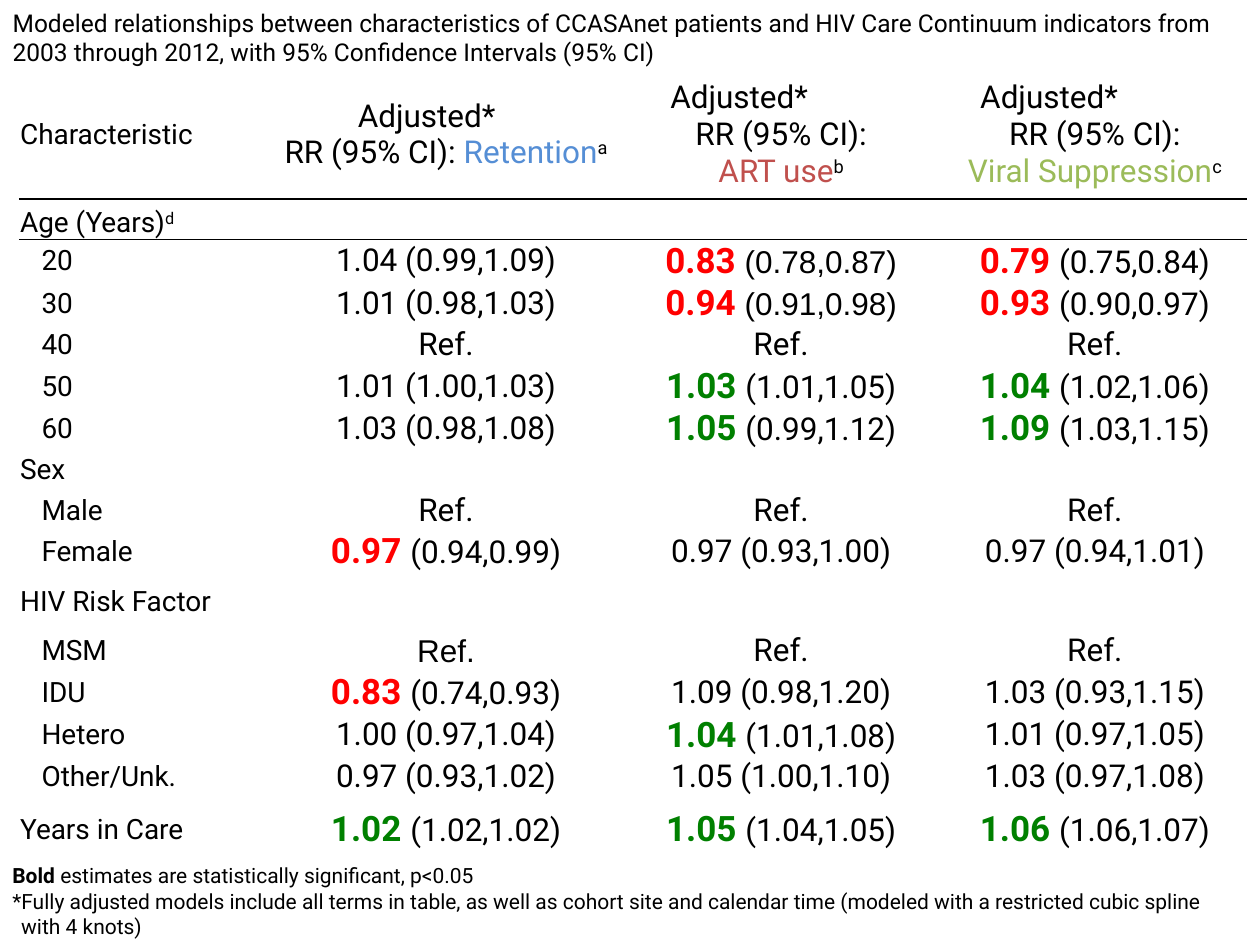
from dataclasses import dataclass

from lxml import etree
from pptx import Presentation
from pptx.dml.color import RGBColor
from pptx.enum.text import MSO_ANCHOR, MSO_AUTO_SIZE, PP_ALIGN
from pptx.oxml.ns import qn
from pptx.util import Emu, Pt

LEFT, CENTER = PP_ALIGN.LEFT, PP_ALIGN.CENTER
TOP, MIDDLE, BOTTOM = MSO_ANCHOR.TOP, MSO_ANCHOR.MIDDLE, MSO_ANCHOR.BOTTOM
NO_AUTOFIT = MSO_AUTO_SIZE.NONE
PX = 9144  # 100 px to the inch
TITLE_ONLY = 5
PLAIN_TABLE_STYLE = "{2D5ABB26-0587-4C30-8999-92F81FD0307C}"


@dataclass(frozen=True)
class Theme:
    font: str = "Roboto"
    alternate_font: str = "Arial"
    text: str = "000000"
    lower: str = "FF0000"
    higher: str = "008000"
    retention: str = "558ED5"
    art_use: str = "C0504D"
    suppression: str = "9BBB59"
    title_size: int = 14
    label_size: int = 16
    value_size: int = 18
    bold_size: int = 20
    note_size: int = 12


@dataclass(frozen=True)
class Span:
    text: str
    color: str = ""
    size: int = 0
    bold: bool = False
    font: str = ""
    superscript: bool = False


@dataclass(frozen=True)
class Line:
    spans: tuple
    align: PP_ALIGN = LEFT
    indent: int = 0


THEME = Theme()
INDENT = 17
COLUMN_WIDTHS = (201, 276, 256, 242)
HEADER_HEIGHT, ROW_HEIGHT = 103, 32
TALL_ROWS = {"HIV Risk Factor": 46, "Years in Care": 53}

TITLE = ("Modeled relationships between characteristics of CCASAnet patients and "
         "HIV Care Continuum indicators from 2003 through 2012, "
         "with 95% Confidence Intervals (95% CI)")

# "*" marks a significant estimate, "~" text in the alternate font.
GROUPS = (
    ("Age (Years)", (), (
        ("20", "1.04 (0.99,1.09)", "*0.83 ~(0.78,0.87)", "*0.79 (0.75,0.84)"),
        ("30", "1.01 (0.98,1.03)", "*0.94 ~(0.91,0.98)", "*0.93 (0.90,0.97)"),
        ("40", "Ref.", "Ref.", "Ref."),
        ("50", "1.01 (1.00,1.03)", "*1.03 (1.01,1.05)", "*1.04 (1.02,1.06)"),
        ("60", "1.03 (0.98,1.08)", "*1.05 (0.99,1.12)", "*1.09 (1.03,1.15)"))),
    ("Sex", (), (
        ("Male", "Ref.", "Ref.", "Ref."),
        ("Female", "*0.97 (0.94,0.99)", "0.97 (0.93,1.00)", "0.97 (0.94,1.01)"))),
    ("HIV Risk Factor", (), (
        ("MSM", "~Ref.", "Ref.", "Ref."),
        ("IDU", "*0.83 (0.74,0.93)", "1.09 (0.98,1.20)", "1.03 (0.93,1.15)"),
        ("Hetero", "1.00 (0.97,1.04)", "*1.04 (1.01,1.08)", "1.01 (0.97,1.05)"),
        ("Other/Unk.", "0.97 (0.93,1.02)", "1.05 (1.00,1.10)", "1.03 (0.97,1.08)"))),
    ("Years in Care", ("*1.02 (1.02,1.02)", "*1.05 (1.04,1.05)", "*1.06 (1.06,1.07)"), ()),
)


def marked_span(text):
    font = THEME.alternate_font if text.startswith("~") else ""
    return Span(text.lstrip("~"), font=font)


def estimate_line(entry):
    """Turn a marked entry into a centred line; the color tells below from above 1."""
    if not entry.startswith("*"):
        return Line((marked_span(entry),), CENTER)
    ratio, interval = entry[1:].split(" ")
    color = THEME.lower if float(ratio) < 1 else THEME.higher
    return Line((Span(ratio, color, THEME.bold_size, True),
                 Span(" ", font=THEME.alternate_font),
                 marked_span(interval)), CENTER)


def header_lines(indent, outcome, color, letter, same_line):
    ratio = Span("RR (95% CI): " if same_line else "RR (95% CI):")
    measure = (Span(outcome, color), Span(letter, superscript=True))
    rest = ((ratio, *measure),) if same_line else ((ratio,), measure)
    return [Line((Span("Adjusted*"),), indent=indent),
            *(Line(spans, CENTER) for spans in rest)]


class SlideBuilder:
    def __init__(self, page, theme):
        self.page = page
        self.theme = theme

    def place(self, shape, left, top, width, height):
        shape.left, shape.top = Emu(left * PX), Emu(top * PX)
        shape.width, shape.height = Emu(width * PX), Emu(height * PX)

    def add_lines(self, frame, lines, size):
        for index, line in enumerate(lines):
            para = frame.add_paragraph() if index else frame.paragraphs[0]
            para.alignment = line.align
            if line.indent:
                para._p.get_or_add_pPr().set("marL", str(line.indent * PX))
            para.font.name = self.theme.font
            para.font.size = Pt(size)
            para.font.bold = False
            para.font.color.rgb = RGBColor.from_string(self.theme.text)
            for span in line.spans:
                self.add_span(para, span)

    def add_span(self, para, span):
        run = para.add_run()
        run.text = span.text
        if span.color:
            run.font.color.rgb = RGBColor.from_string(span.color)
        if span.size:
            run.font.size = Pt(span.size)
        if span.bold:
            run.font.bold = True
        if span.font:
            run.font.name = span.font
        if span.superscript:
            run._r.get_or_add_rPr().set("baseline", "30000")

    def title(self, text, *bounds):
        box = self.page.shapes.title
        self.place(box, *bounds)
        box.text_frame.auto_size = NO_AUTOFIT
        box.text_frame.vertical_anchor = TOP
        self.add_lines(box.text_frame, [Line((Span(text),))], self.theme.title_size)

    def text_box(self, lines, size, left, top, width, height):
        box = self.page.shapes.add_textbox(*(Emu(n * PX) for n in (left, top, width, height)))
        box.text_frame.word_wrap = True
        self.add_lines(box.text_frame, lines, size)

    def table(self, left, top, widths, heights):
        bounds = (left, top, sum(widths), sum(heights))
        table = self.page.shapes.add_table(
            len(heights), len(widths), *(Emu(n * PX) for n in bounds)).table
        table.first_row = table.horz_banding = False
        table._tbl.tblPr.find(qn("a:tableStyleId")).text = PLAIN_TABLE_STYLE
        for column, width in zip(table.columns, widths):
            column.width = Emu(width * PX)
        for row, height in zip(table.rows, heights):
            row.height = Emu(height * PX)
        return table

    def cell(self, cell, lines, size, anchor=MIDDLE):
        cell.margin_left = cell.margin_right = cell.margin_top = Emu(PX)
        cell.margin_bottom = Emu(0)
        cell.vertical_anchor = anchor
        cell.fill.background()
        self.add_lines(cell.text_frame, lines, size)

    def border(self, cell, side):
        line = etree.Element(qn(f"a:{side}"), w=str(Pt(1)))
        fill = etree.SubElement(line, qn("a:solidFill"))
        etree.SubElement(fill, qn("a:srgbClr"), val=self.theme.text)
        cell._tc.get_or_add_tcPr().insert(0, line)


def add_results(builder):
    rows = []
    for group, values, members in GROUPS:
        rows.append((group, 0, values))
        rows += [(label, INDENT, entries) for label, *entries in members]
    heights = [HEADER_HEIGHT] + [TALL_ROWS.get(row[0], ROW_HEIGHT) for row in rows]
    table = builder.table(15, 55, COLUMN_WIDTHS, heights)

    headers = (
        header_lines(67, "Retention", THEME.retention, "a", True),
        header_lines(39, "ART use", THEME.art_use, "b", False),
        header_lines(29, "Viral Suppression", THEME.suppression, "c", False),
    )
    builder.cell(table.cell(0, 0), [Line((Span("Characteristic"),))], THEME.label_size)
    for column, lines in enumerate(headers, 1):
        builder.cell(table.cell(0, column), lines, THEME.value_size)

    for index, (label, indent, entries) in enumerate(rows, 1):
        is_age = label == "Age (Years)"
        note = (Span("d", superscript=True),) if is_age else ()
        builder.cell(table.cell(index, 0), [Line((Span(label), *note), indent=indent)],
                     THEME.label_size, BOTTOM if is_age else MIDDLE)
        for column in range(1, len(COLUMN_WIDTHS)):
            lines = [estimate_line(entries[column - 1])] if entries else []
            builder.cell(table.cell(index, column), lines, THEME.value_size)

    for column in range(len(COLUMN_WIDTHS)):
        builder.border(table.cell(0, column), "lnB")
        builder.border(table.cell(1, column), "lnT")


def main():
    deck = Presentation()
    deck.slide_width, deck.slide_height = Emu(1000 * PX), Emu(750 * PX)
    page = deck.slides.add_slide(deck.slide_layouts[TITLE_ONLY])
    builder = SlideBuilder(page, THEME)
    builder.title(TITLE, 0, 1, 1000, 57)
    add_results(builder)
    builder.text_box([
        Line((Span("Bold", bold=True),
              Span(" estimates are statistically significant, p<0.05"))),
        Line((Span("*Fully adjusted models include all terms in table, as well as cohort site "
                   "and calendar time (modeled with a restricted cubic spline"),)),
        Line((Span("with 4 knots)"),), indent=7),
    ], THEME.note_size, 0, 680, 1000, 71)
    deck.save("out.pptx")


if __name__ == "__main__":
    main()
